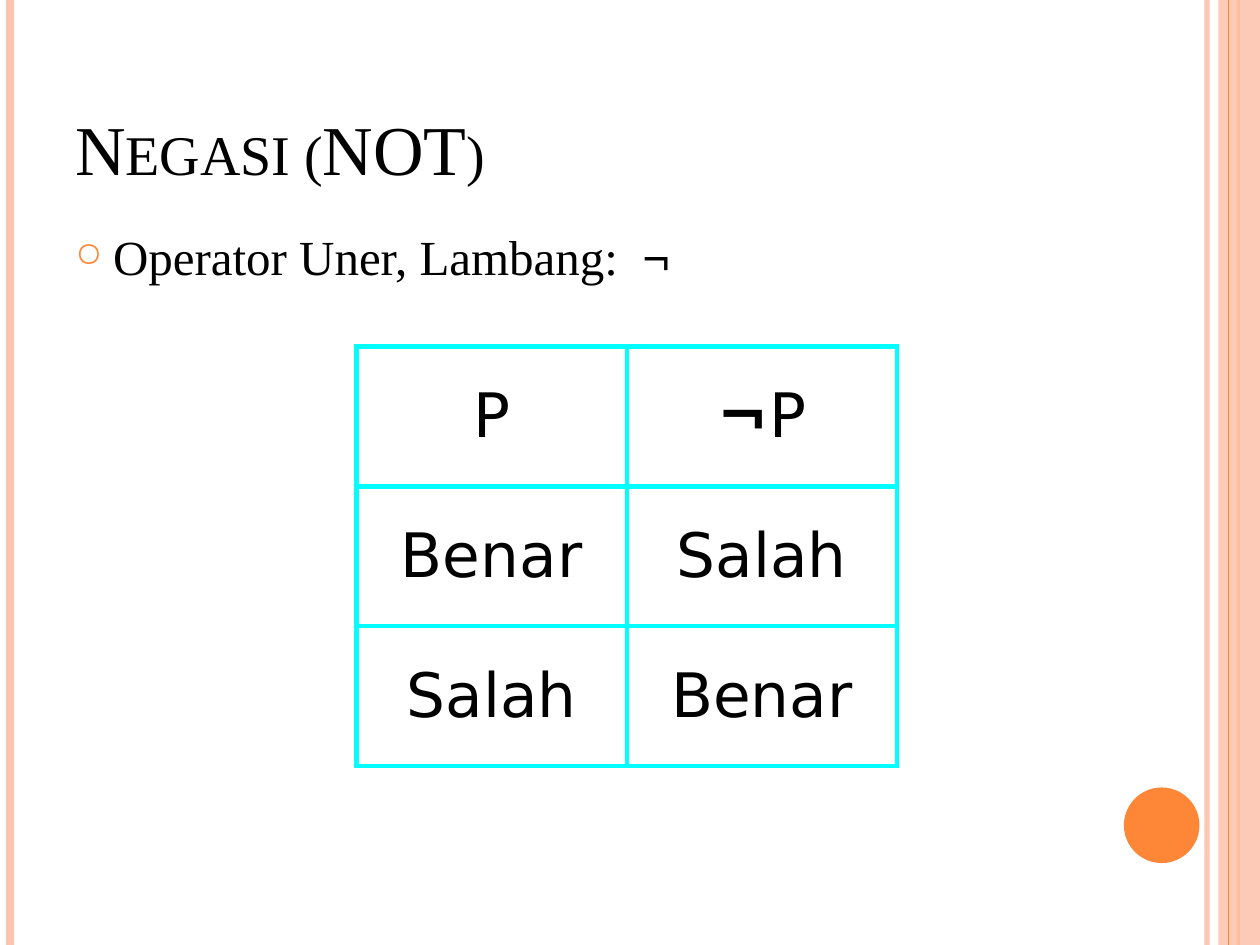
from lxml import etree
from pptx import Presentation
from pptx.dml.color import RGBColor
from pptx.enum import shapes, text
from pptx.oxml.ns import qn
from pptx.util import Inches, Pt

SERIF, SANS = "Times New Roman", "DejaVu Sans"
BLACK, ORANGE, PEACH, CYAN = "000000", "FE8637", "FEC3AE", "00FFFF"
SLIDE_WIDTH, SLIDE_HEIGHT = 10, 7.5

TITLE = "Negasi (NOT)"
BULLET_RUNS = [("Operator Uner, Lambang:  ", False), ("¬", True)]
TRUTH_TABLE = [
    [[("P", False)], [("¬", True), ("P", False)]],
    [[("Benar", False)], [("Salah", False)]],
    [[("Salah", False)], [("Benar", False)]],
]
TABLE_BOX = (2.83, 2.75, 4.29, 3.33)
# x, colour, width in points, opacity in percent
STRIPES_BEHIND = [(9.58, PEACH, 3, 93), (0.08, PEACH, 4.5, 100), (9.83, ORANGE, 1.5, 100)]
STRIPES_FRONT = [(9.75, ORANGE, 0.75, 100)]


def rgb(value):
    return RGBColor.from_string(value)


def add_element(parent, tag, **attributes):
    return etree.SubElement(parent, qn(tag), attributes)


def set_opacity(element, percent):
    """Give the first colour inside the element an alpha value."""
    if percent < 100:
        colour = next(element.iter(qn("a:srgbClr")))
        add_element(colour, "a:alpha", val=str(percent * 1000))


def add_stripes(slide, stripes):
    for x, colour, width, opacity in stripes:
        line = slide.shapes.add_connector(
            shapes.MSO_CONNECTOR.STRAIGHT, Inches(x), 0, Inches(x), Inches(SLIDE_HEIGHT))
        line.line.color.rgb = rgb(colour)
        line.line.width = Pt(width)
        properties = line._element.spPr
        set_opacity(properties, opacity)
        add_element(properties, "a:effectLst")


def add_filled_shape(slide, kind, box, colour, opacity=100):
    shape = slide.shapes.add_shape(kind, *map(Inches, box))
    shape.shadow.inherit = False
    shape.fill.solid()
    shape.fill.fore_color.rgb = rgb(colour)
    set_opacity(shape._element.spPr, opacity)
    shape.line.fill.background()


def add_runs(paragraph, runs, font, size):
    for words, bold in runs:
        run = paragraph.add_run()
        run.text = words
        run.font.name = font
        run.font.size = Pt(size)
        run.font.bold = bold
        run.font.color.rgb = rgb(BLACK)


def add_text_box(slide, box, anchor):
    frame = slide.shapes.add_textbox(*map(Inches, box)).text_frame
    frame.word_wrap = True
    frame.vertical_anchor = anchor
    return frame.paragraphs[0]


def set_bullet(paragraph, character, colour, percent, indent):
    properties = paragraph._p.get_or_add_pPr()
    properties.set("marL", str(Inches(indent)))
    properties.set("indent", str(-Inches(indent)))
    add_element(add_element(properties, "a:buClr"), "a:srgbClr", val=colour)
    add_element(properties, "a:buSzPct", val=str(percent * 1000))
    add_element(properties, "a:buChar", char=character)


def set_borders(cell, colour, width):
    properties = cell._tc.get_or_add_tcPr()
    for position, side in enumerate(("a:lnL", "a:lnR", "a:lnT", "a:lnB")):
        border = etree.Element(qn(side), w=str(Pt(width)))
        add_element(add_element(border, "a:solidFill"), "a:srgbClr", val=colour)
        properties.insert(position, border)


def add_truth_table(slide):
    table = slide.shapes.add_table(
        len(TRUTH_TABLE), len(TRUTH_TABLE[0]), *map(Inches, TABLE_BOX)).table
    table.first_row = table.horz_banding = False
    for row, values in enumerate(TRUTH_TABLE):
        for column, runs in enumerate(values):
            cell = table.cell(row, column)
            cell.fill.background()
            cell.vertical_anchor = text.MSO_ANCHOR.MIDDLE
            set_borders(cell, CYAN, 3)
            paragraph = cell.text_frame.paragraphs[0]
            paragraph.alignment = text.PP_ALIGN.CENTER
            add_runs(paragraph, runs, SANS, 35)


def main():
    presentation = Presentation()
    presentation.slide_width = Inches(SLIDE_WIDTH)
    presentation.slide_height = Inches(SLIDE_HEIGHT)
    slide = presentation.slides.add_slide(presentation.slide_layouts[6])

    add_stripes(slide, STRIPES_BEHIND)
    add_filled_shape(slide, shapes.MSO_SHAPE.RECTANGLE, (9.67, 0, 0.33, SLIDE_HEIGHT), PEACH, 87)
    add_stripes(slide, STRIPES_FRONT)
    add_filled_shape(slide, shapes.MSO_SHAPE.OVAL, (8.92, 6.25, 0.6, 0.6), ORANGE)

    title = add_text_box(slide, (0.5, 0.3, 8.17, 1.25), text.MSO_ANCHOR.BOTTOM)
    add_runs(title, [(TITLE, False)], SERIF, 40)
    title.runs[0].font._element.set("cap", "small")

    body = add_text_box(slide, (0.5, 1.75, 8.17, 5.33), text.MSO_ANCHOR.TOP)
    set_bullet(body, "○", ORANGE, 70, 0.3)
    add_runs(body, BULLET_RUNS, SERIF, 28)

    add_truth_table(slide)
    presentation.save("out.pptx")


if __name__ == "__main__":
    main()
